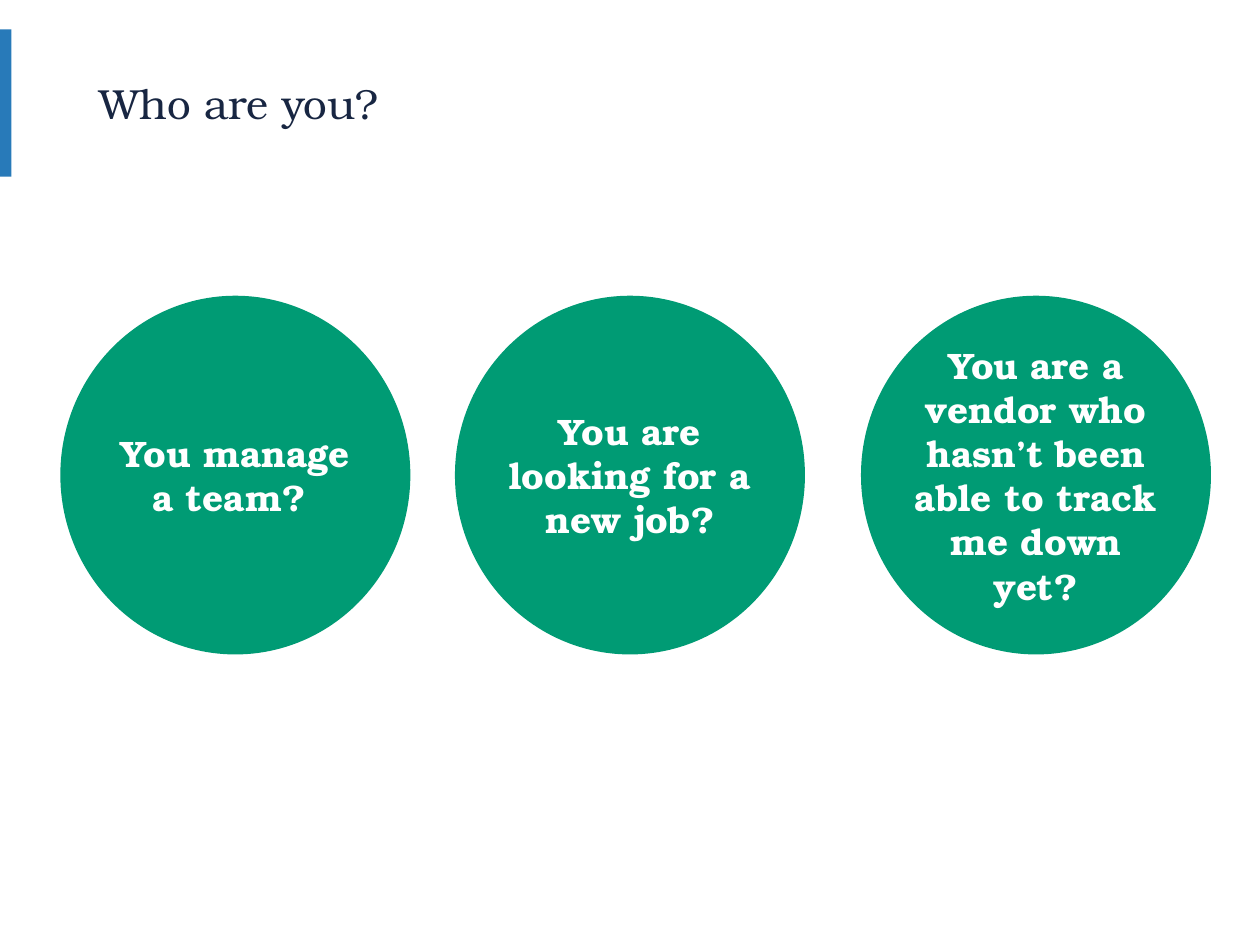
from pptx import Presentation
from pptx.dml.color import RGBColor
from pptx.enum.shapes import MSO_SHAPE as Shape
from pptx.enum.text import MSO_ANCHOR as Anchor, PP_ALIGN as Align
from pptx.util import Pt

FONT = "TeX Gyre Bonum"
COLORS = {"accent": "287AB9", "title": "182642", "circle": "009B74", "white": "FFFFFF"}
CIRCLE_TOP, CIRCLE_WIDTH, CIRCLE_HEIGHT = 169, 200, 205
CIRCLES = [
    (34.5, "You manage a team? "),
    (260, "You are looking for a new job?"),
    (492, "You are a vendor who hasn’t been able to track me down yet?"),
]


def rgb(name):
    return RGBColor.from_string(COLORS[name])


def add_filled_shape(slide, kind, left, top, width, height, color):
    shape = slide.shapes.add_shape(kind, Pt(left), Pt(top), Pt(width), Pt(height))
    shape.shadow.inherit = False
    shape.fill.solid()
    shape.fill.fore_color.rgb = rgb(color)
    shape.line.fill.background()
    return shape


def write_text(shape, text, size, color, align, bold=False):
    frame = shape.text_frame
    frame.word_wrap = True
    frame.vertical_anchor = Anchor.MIDDLE
    paragraph = frame.paragraphs[0]
    paragraph.alignment = align
    run = paragraph.add_run()
    run.text = text
    run.font.name = FONT
    run.font.size = Pt(size)
    run.font.bold = bold
    run.font.color.rgb = rgb(color)
    return frame


def set_title(slide, text):
    title = slide.shapes.title
    title.left, title.top = Pt(49.5), Pt(22.5)
    title.width, title.height = Pt(621), Pt(76)
    frame = write_text(title, text, 24, "title", Align.LEFT)
    frame.paragraphs[0].line_spacing = 0.9


def add_circle(slide, left, text):
    circle = add_filled_shape(slide, Shape.OVAL, left, CIRCLE_TOP,
                              CIRCLE_WIDTH, CIRCLE_HEIGHT, "circle")
    frame = write_text(circle, text, 21, "white", Align.CENTER, bold=True)
    frame.margin_left = frame.margin_right = 0
    frame.margin_top = frame.margin_bottom = 0


def main():
    presentation = Presentation()
    presentation.slide_width, presentation.slide_height = Pt(720), Pt(540)
    slide = presentation.slides.add_slide(presentation.slide_layouts[5])
    add_filled_shape(slide, Shape.RECTANGLE, 0, 16.75, 6.5, 84.25, "accent")
    set_title(slide, "Who are you?")
    for left, text in CIRCLES:
        add_circle(slide, left, text)
    presentation.save("out.pptx")


if __name__ == "__main__":
    main()
